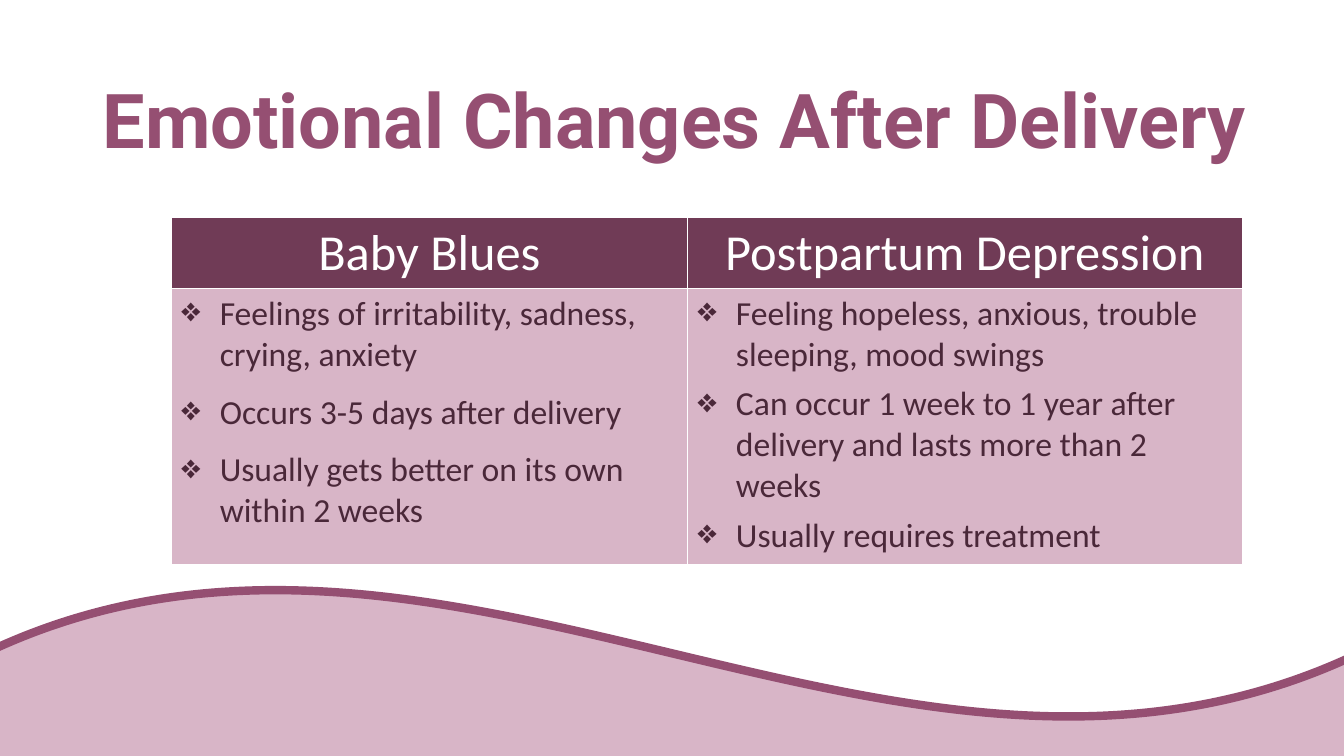
from dataclasses import dataclass

from pptx import Presentation
from pptx.dml.color import RGBColor as RGB
from pptx.enum.shapes import MSO_SHAPE as Shape
from pptx.enum.text import MSO_ANCHOR as Anchor, PP_ALIGN as Align
from pptx.oxml import parse_xml
from pptx.oxml.ns import nsdecls
from pptx.util import Inches, Pt


@dataclass(frozen=True)
class Theme:
    plum: str = "954F72"
    dark: str = "703B56"
    ink: str = "4A2839"
    pink: str = "D8B5C7"
    white: str = "FFFFFF"
    title: int = 54
    head: int = 36
    body: int = 24
    title_font: str = "Roboto"
    body_font: str = "Calibri"


@dataclass(frozen=True)
class Column:
    head: str
    width: float
    before: int
    items: tuple[str, ...]


LOOK = Theme()
COLUMNS = (
    Column("Baby Blues", 5.12, 6, (
        "Feelings of irritability, sadness, crying, anxiety",
        "Occurs 3-5 days after delivery",
        "Usually gets better on its own within 2 weeks",
    )),
    Column("Postpartum Depression", 5.5, 0, (
        "Feeling hopeless, anxious, trouble sleeping, mood swings",
        "Can occur 1 week to 1 year after delivery and lasts more than 2 weeks",
        "Usually requires treatment",
    )),
)
ROWS = (0.7, 2.74)


def add_run(para, text: str, size: int, color: str,
            face: str = LOOK.body_font, bold: bool = False) -> None:
    run = para.add_run()
    run.text = text
    font = run.font
    font.size, font.name, font.bold = Pt(size), face, bold
    font.color.rgb = RGB.from_string(color)


def style_cell(cell, fill: str) -> None:
    props = cell._tc.get_or_add_tcPr()
    for side in "LRTB":
        props.append(parse_xml(
            f'<a:ln{side} w="{Pt(1)}" {nsdecls("a")}><a:solidFill>'
            f'<a:srgbClr val="{LOOK.white}"/></a:solidFill></a:ln{side}>'))
    cell.fill.solid()
    cell.fill.fore_color.rgb = RGB.from_string(fill)


def add_bullet(para) -> None:
    props = para._p.get_or_add_pPr()
    props.set("marL", str(Inches(0.38)))
    props.set("indent", str(-Inches(0.38)))
    props.append(parse_xml(f'<a:buChar char="❖" {nsdecls("a")}/>'))


def add_wave(slide) -> None:
    wave = slide.shapes.add_shape(Shape.WAVE, Inches(-0.15), Inches(5.83),
                                  Inches(13.63), Inches(5.21))
    wave.shadow.inherit = False
    wave.fill.solid()
    wave.fill.fore_color.rgb = RGB.from_string(LOOK.pink)
    wave.line.color.rgb = RGB.from_string(LOOK.plum)
    wave.line.width = Pt(6)


def add_title(slide, text: str) -> None:
    box = slide.shapes.add_textbox(Inches(0.92), Inches(0.4),
                                   Inches(11.83), Inches(1.45))
    frame = box.text_frame
    frame.word_wrap = True
    frame.vertical_anchor = Anchor.MIDDLE
    para = frame.paragraphs[0]
    para.line_spacing = 1.1
    para.space_after = Pt(12)
    add_run(para, text, LOOK.title, LOOK.plum, LOOK.title_font, True)


def fill_column(table, index: int, column: Column) -> None:
    table.columns[index].width = Inches(column.width)
    # Heading
    head = table.cell(0, index)
    style_cell(head, LOOK.dark)
    para = head.text_frame.paragraphs[0]
    para.alignment = Align.CENTER
    add_run(para, column.head, LOOK.head, LOOK.white)
    # Bullet list
    body = table.cell(1, index)
    style_cell(body, LOOK.pink)
    frame = body.text_frame
    for row, item in enumerate(column.items):
        para = frame.add_paragraph() if row else frame.paragraphs[0]
        add_bullet(para)
        para.space_before = Pt(column.before if row else 0)
        para.space_after = Pt(6)
        add_run(para, item, LOOK.body, LOOK.ink)


def add_grid(slide) -> None:
    width = sum(column.width for column in COLUMNS)
    table = slide.shapes.add_table(
        len(ROWS), len(COLUMNS), Inches(1.7), Inches(2.16),
        Inches(width), Inches(sum(ROWS))).table
    for row, height in zip(table.rows, ROWS):
        row.height = Inches(height)
    for index, column in enumerate(COLUMNS):
        fill_column(table, index, column)


def main() -> None:
    deck = Presentation()
    deck.slide_width, deck.slide_height = Inches(13.33), Inches(7.5)
    slide = deck.slides.add_slide(deck.slide_layouts[6])
    add_wave(slide)
    add_title(slide, "Emotional Changes After Delivery")
    add_grid(slide)
    deck.save("out.pptx")


if __name__ == "__main__":
    main()
